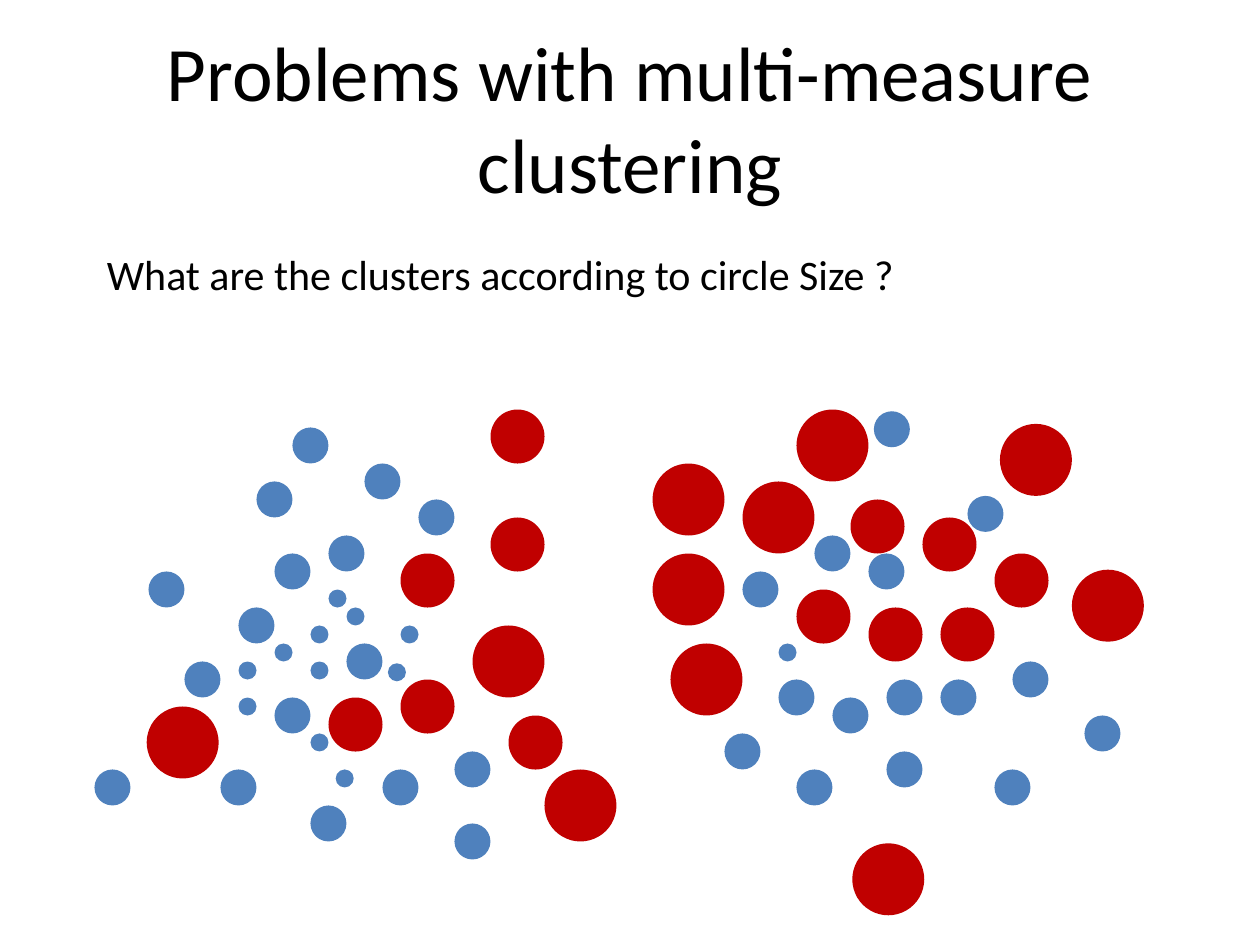
from pptx import Presentation, util as u
from pptx.dml.color import RGBColor
from pptx.enum import shapes, text

BLACK = RGBColor(0x00, 0x00, 0x00)
BLUE = RGBColor(0x4F, 0x81, 0xBD)
RED = RGBColor(0xC0, 0x00, 0x00)

# Circle diameter in grid cells: colour and (column, row) of each top left corner
CIRCLES = {
    1: (BLUE, [
        (14, 11), (12, 14), (8, 14), (17, 12), (12, 18), (8, 16), (38, 13),
        (13, 10), (12, 12), (10, 13), (13.4, 20), (16.3, 14.1),
    ]),
    2: (BLUE, [
        (13, 7), (15, 3), (3, 9), (0, 20), (11, 1), (18, 5), (20, 19),
        (9, 4), (14, 13), (8, 11), (10, 8), (5, 14), (7, 20), (10, 16),
        (16, 20), (12, 22), (20, 23),
        (43.3, 0.1), (48.5, 4.8), (55, 17), (51, 14), (50, 20), (36, 9),
        (40, 7), (38, 15), (35, 18), (44, 15), (43, 8), (41, 16), (39, 20),
        (47, 15), (44, 19),
    ]),
    3: (RED, [
        (17, 8), (17, 15), (22, 6), (13, 16), (23, 17), (22, 0),
        (39, 10), (42, 5), (43, 11), (46, 6), (50, 8), (47, 11),
    ]),
    4: (RED, [
        (21, 12), (25, 20), (2.9, 16.5),
        (32, 13), (31, 8), (31, 3), (36, 4), (39, 0),
        (54.3, 8.9), (50.3, 0.8), (42.1, 24.1),
    ]),
}


class SlideBuilder:
    FONT = "Calibri"
    LEFT, TOP, CELL = 0.75, 3.25, 1 / 7

    def __init__(self, deck):
        self.page = deck.slides.add_slide(deck.slide_layouts[6])
        self.width, self.height = deck.slide_width, deck.slide_height

    def text(self, wording, left, top, width, height, size,
             align=text.PP_ALIGN.LEFT, anchor=text.MSO_ANCHOR.TOP, wrap=False):
        """Place text; the box is given as shares of the slide's size."""
        box = self.page.shapes.add_textbox(
            int(left * self.width), int(top * self.height),
            int(width * self.width), int(height * self.height))
        frame = box.text_frame
        frame.text = wording
        frame.word_wrap = wrap
        frame.vertical_anchor = anchor
        para = frame.paragraphs[0]
        para.alignment = align
        font = para.runs[0].font
        font.name, font.size = self.FONT, u.Pt(size)
        font.color.rgb = BLACK

    def circle(self, column, row, cells, colour):
        diameter = u.Inches(cells * self.CELL)
        shape = self.page.shapes.add_shape(
            shapes.MSO_SHAPE.OVAL,
            u.Inches(self.LEFT + column * self.CELL),
            u.Inches(self.TOP + row * self.CELL), diameter, diameter)
        shape.shadow.inherit = False
        shape.fill.solid()
        shape.fill.fore_color.rgb = colour
        shape.line.fill.background()


def main():
    deck = Presentation()
    deck.slide_width, deck.slide_height = u.Inches(10), u.Inches(7.5)
    slide = SlideBuilder(deck)
    slide.text("Problems with multi-measure clustering", 0.05, 0.04, 0.9, 1 / 6,
               44, text.PP_ALIGN.CENTER, text.MSO_ANCHOR.MIDDLE, wrap=True)
    for cells, (colour, corners) in CIRCLES.items():
        for column, row in corners:
            slide.circle(column, row, cells, colour)
    slide.text("What are the clusters according to circle Size ?",
               0.075, 0.256, 0.65, 0.067, 24)
    deck.save("out.pptx")


if __name__ == "__main__":
    main()
